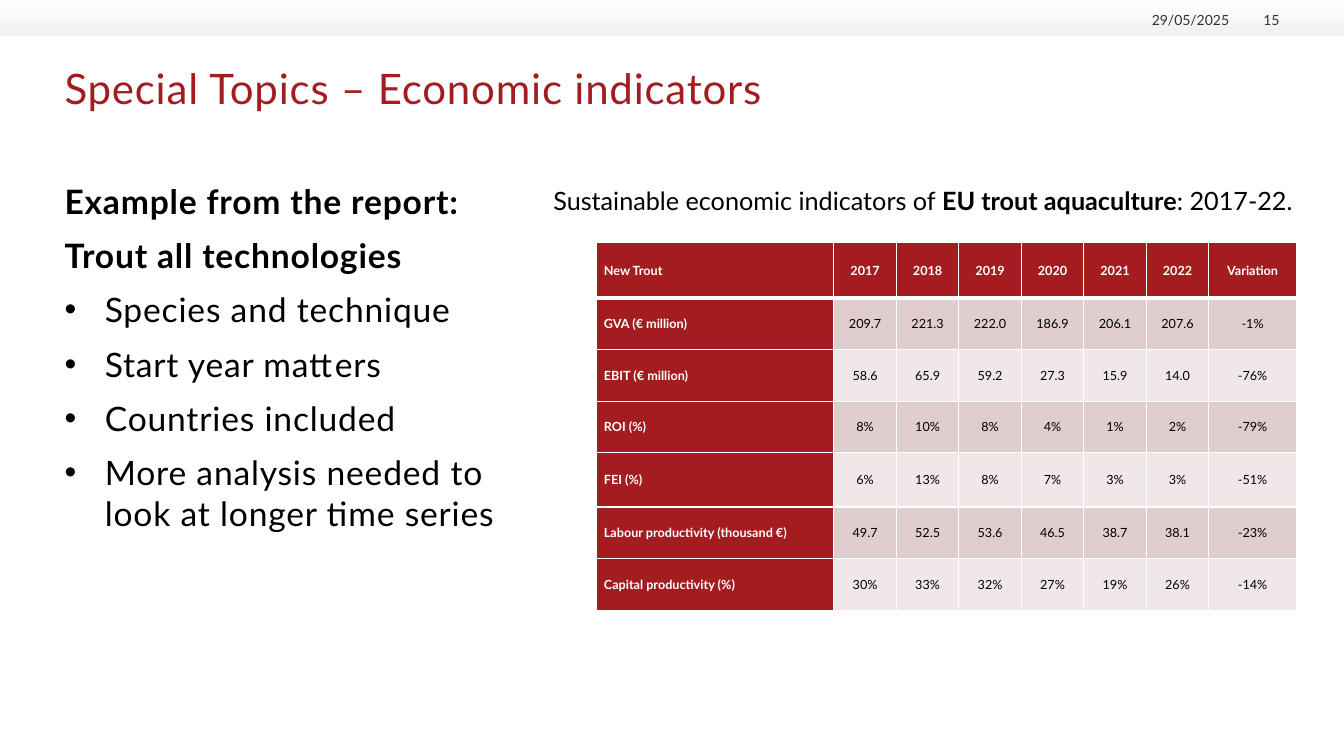
from lxml.etree import SubElement
from pptx import Presentation
from pptx.dml.color import RGBColor
from pptx.enum.shapes import MSO_SHAPE
from pptx.enum.text import MSO_ANCHOR, PP_ALIGN
from pptx.oxml.ns import qn
from pptx.util import Inches, Pt

COLORS = {
    "red": "A31D20",
    "black": "000000",
    "white": "FFFFFF",
    "gray": "333333",
    "bar": "EFF0EF",
    "band_dark": "E0CDCD",
    "band_light": "F0E8E8",
}
INDICATORS = [
    ["New Trout", "2017", "2018", "2019", "2020", "2021", "2022", "Variation"],
    ["GVA (€ million)", "209.7", "221.3", "222.0", "186.9", "206.1", "207.6", "-1%"],
    ["EBIT (€ million)", "58.6", "65.9", "59.2", "27.3", "15.9", "14.0", "-76%"],
    ["ROI (%)", "8%", "10%", "8%", "4%", "1%", "2%", "-79%"],
    ["FEI (%)", "6%", "13%", "8%", "7%", "3%", "3%", "-51%"],
    ["Labour productivity (thousand €)", "49.7", "52.5", "53.6", "46.5", "38.7", "38.1", "-23%"],
    ["Capital productivity (%)", "30%", "33%", "32%", "27%", "19%", "26%", "-14%"],
]
COLUMN_WIDTHS = [2.35] + [0.62] * 6 + [0.87]
ROW_HEIGHTS = [0.56, 0.51, 0.51, 0.51, 0.54, 0.51, 0.52]


class SlideBuilder:
    """Holds the style and the current slide, and adds each kind of element."""

    def __init__(self, slide, font_name, colors):
        self.slide = slide
        self.font_name = font_name
        self.colors = colors

    def color(self, name):
        return RGBColor.from_string(self.colors[name])

    def apply(self, target, values):
        for name, value in values.items():
            setattr(target, name, value)

    def run(self, paragraph, text, size, color, bold=False, spacing=0):
        run = paragraph.add_run()
        run.text = text
        self.apply(run.font, {"name": self.font_name, "size": Pt(size), "bold": bold})
        run.font.color.rgb = self.color(color)
        if spacing:
            run._r.get_or_add_rPr().set("spc", str(round(spacing * 100)))

    def bullet(self, paragraph):
        properties = paragraph._p.get_or_add_pPr()
        indent = Inches(0.4)
        properties.set("marL", str(indent))
        properties.set("indent", str(-indent))
        SubElement(properties, qn("a:buFont"), typeface="Arial")
        SubElement(properties, qn("a:buChar"), char="•")

    def gradient_bar(self, left, top, width, height):
        shape = self.slide.shapes.add_shape(
            MSO_SHAPE.RECTANGLE, Inches(left), Inches(top), Inches(width), Inches(height))
        shape.shadow.inherit = False
        shape.line.fill.background()
        shape.fill.gradient()
        shape.fill.gradient_angle = 270
        for stop, name in zip(shape.fill.gradient_stops, ("white", "bar")):
            stop.color.rgb = self.color(name)

    def text(self, box, paragraphs, size, color, spacing=0, margins=(0, 0),
             anchor=MSO_ANCHOR.TOP, alignment=PP_ALIGN.LEFT, gap=0, line_spacing=1.0):
        shape = self.slide.shapes.add_textbox(*(Inches(length) for length in box))
        frame = shape.text_frame
        horizontal, vertical = (Inches(margin) for margin in margins)
        self.apply(frame, {
            "word_wrap": True, "vertical_anchor": anchor,
            "margin_left": horizontal, "margin_right": horizontal,
            "margin_top": vertical, "margin_bottom": vertical,
        })
        for index, (bulleted, runs) in enumerate(paragraphs):
            paragraph = frame.add_paragraph() if index else frame.paragraphs[0]
            if bulleted:
                self.bullet(paragraph)
            self.apply(paragraph, {
                "alignment": alignment, "line_spacing": line_spacing,
                "space_before": Pt(gap if index else 0),
            })
            for content, bold in runs:
                self.run(paragraph, content, size, color, bold, spacing)

    def cell_borders(self, cell, top, bottom):
        properties = cell._tc.get_or_add_tcPr()
        for side, width in {"L": 1, "R": 1, "T": top, "B": bottom}.items():
            line = SubElement(properties, qn(f"a:ln{side}"), w=str(Pt(width)))
            fill = SubElement(line, qn("a:solidFill"))
            SubElement(fill, qn("a:srgbClr"), val=self.colors["white"])

    def table(self, left, top, rows, column_widths, row_heights, size):
        frame = self.slide.shapes.add_table(
            len(rows), len(column_widths), Inches(left), Inches(top),
            Inches(sum(column_widths)), Inches(sum(row_heights)))
        table = frame.table
        for column, width in zip(table.columns, column_widths):
            column.width = Inches(width)
        for row, height in zip(table.rows, row_heights):
            row.height = Inches(height)
        for row_index, row in enumerate(rows):
            band = "band_dark" if row_index % 2 else "band_light"
            for column_index, content in enumerate(row):
                heading = row_index == 0 or column_index == 0
                cell = table.cell(row_index, column_index)
                self.apply(cell, {
                    "vertical_anchor": MSO_ANCHOR.MIDDLE,
                    "margin_left": Inches(0.07), "margin_right": Inches(0.07),
                    "margin_top": 0, "margin_bottom": 0,
                })
                self.cell_borders(cell, 3 if row_index == 1 else 1, 3 if row_index == 0 else 1)
                cell.fill.solid()
                cell.fill.fore_color.rgb = self.color("red" if heading else band)
                paragraph = cell.text_frame.paragraphs[0]
                paragraph.alignment = PP_ALIGN.CENTER if column_index else PP_ALIGN.LEFT
                self.run(paragraph, content, size, "white" if heading else "black", heading)


def main():
    presentation = Presentation()
    presentation.slide_width = Inches(13.33)
    presentation.slide_height = Inches(7.5)
    slide = presentation.slides.add_slide(presentation.slide_layouts[6])
    builder = SlideBuilder(slide, "Lato", COLORS)

    builder.gradient_bar(0, 0, 13.33, 0.36)
    builder.text((0.64, 0.68, 12.04, 0.95),
                 [(False, [("Special Topics – Economic indicators", False)])],
                 30, "red", spacing=0.6, line_spacing=0.9)

    headings = ["Example from the report:", "Trout all technologies"]
    points = ["Species and technique", "Start year matters", "Countries included",
              "More analysis needed to look at longer time series"]
    body = [(False, [(heading, True)]) for heading in headings]
    body += [(True, [(point, False)]) for point in points]
    builder.text((0.64, 1.79, 4.43, 5.11), body, 24, "black", spacing=0.6, gap=10)

    for left, width, content in [(11.3, 0.89, "29/05/2025"), (12.27, 0.42, "15")]:
        builder.text((left, 0.09, width, 0.19), [(False, [(content, False)])], 10, "gray",
                     anchor=MSO_ANCHOR.BOTTOM, alignment=PP_ALIGN.RIGHT)

    caption = [("Sustainable economic indicators of ", False),
               ("EU trout aquaculture", True), (": 2017-22.", False)]
    builder.text((5.39, 1.79, 7.84, 0.4), [(False, caption)], 18, "black", margins=(0.1, 0.05))
    builder.table(5.92, 2.4, INDICATORS, COLUMN_WIDTHS, ROW_HEIGHTS, 9)
    presentation.save("out.pptx")


if __name__ == "__main__":
    main()
